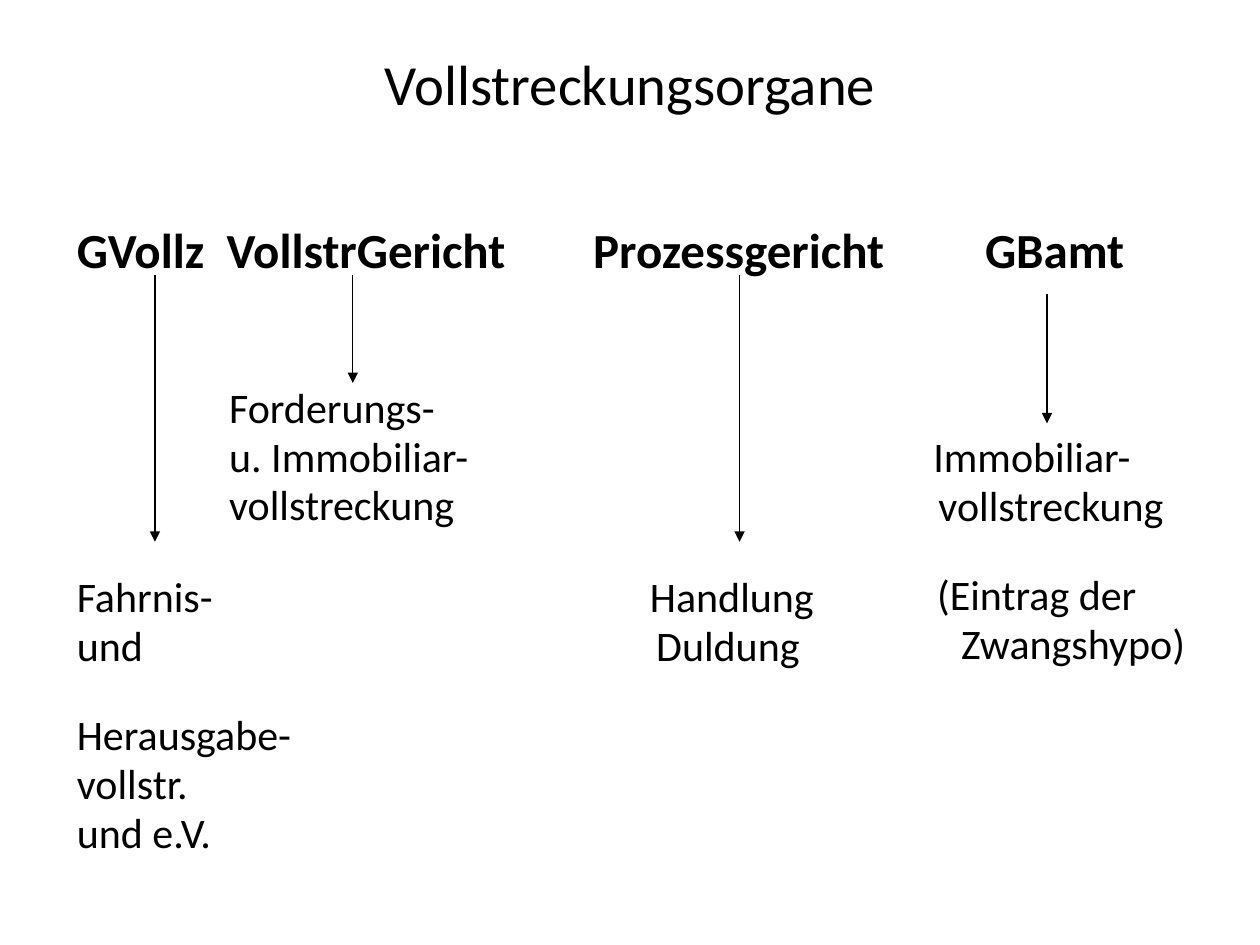
from lxml.etree import SubElement
from pptx import Presentation
from pptx.dml.color import RGBColor
from pptx.enum.shapes import MSO_CONNECTOR
from pptx.enum.text import MSO_ANCHOR, MSO_AUTO_SIZE, PP_ALIGN
from pptx.oxml.ns import qn
from pptx.util import Inches, Pt

BLACK = RGBColor(0, 0, 0)
FONT = "Calibri"
TITLE = "Vollstreckungsorgane"
LINE_GAP, GROUP_GAP = 4.8, 28
COLUMN_TOP = 1.78
COLUMNS = [
    {"box": (0.51, 1.95, 4.95), "heading": ("GVollz", 0), "tasks": [
        ("Fahrnis-", 0, 173), ("und", 0, LINE_GAP),
        ("Herausgabe-", 0, GROUP_GAP), ("vollstr.", 0, LINE_GAP),
        ("und e.V.", 0, LINE_GAP)]},
    {"box": (1.7, 2.6, 2.5), "heading": ("VollstrGericht", 0), "tasks": [
        ("Forderungs-", 0.02, 65), ("u. Immobiliar-", 0.02, LINE_GAP),
        ("vollstreckung", 0.02, LINE_GAP)]},
    {"box": (4.61, 2.65, 3.6), "heading": ("Prozessgericht", 0), "tasks": [
        ("Handlung", 0.45, 173), ("Duldung", 0.5, LINE_GAP)]},
    {"box": (7.31, 2.3, 3.6), "heading": ("GBamt", 0.41), "tasks": [
        ("Immobiliar-", 0, 93), ("vollstreckung", 0.04, LINE_GAP),
        ("(Eintrag der", 0.03, GROUP_GAP), ("Zwangshypo)", 0.22, LINE_GAP)]},
]
ARROWS = [(1.23, 2.18, 4.3), (2.8, 2.18, 3.04),
          (8.31, 2.33, 3.36), (5.87, 2.18, 4.3)]


def place(sp, left, top, width, height):
    sp.left, sp.top = Inches(left), Inches(top)
    sp.width, sp.height = Inches(width), Inches(height)
    sp.text_frame.auto_size = MSO_AUTO_SIZE.NONE
    sp.text_frame.word_wrap = True


def style(p, size, bold=False):
    for r in p.runs:
        r.font.name = FONT
        r.font.size = Pt(size)
        r.font.bold = bold
        r.font.color.rgb = BLACK


def set_line(p, text, indent, gap, size, bold=False):
    p.text = text
    p.line_spacing = 0.8
    p.space_before = Pt(gap)
    pPr = p._p.get_or_add_pPr()
    pPr.set("marL", str(int(Inches(indent))))
    pPr.set("indent", "0")
    SubElement(pPr, qn("a:buNone"))
    style(p, size, bold)


def fill_column(sp, column):
    left, width, height = column["box"]
    place(sp, left, COLUMN_TOP, width, height)
    tf = sp.text_frame
    set_line(tf.paragraphs[0], *column["heading"], 0, 28, bold=True)
    for text, indent, gap in column["tasks"]:
        set_line(tf.add_paragraph(), text, indent, gap, 24)


def add_arrow(s, x, top, bottom):
    line = s.shapes.add_connector(
        MSO_CONNECTOR.STRAIGHT, Inches(x), Inches(top), Inches(x), Inches(bottom))
    line.line.color.rgb = BLACK
    line.line.width = Pt(0.75)
    SubElement(line.line._get_or_add_ln(), qn("a:tailEnd"), type="triangle")
    SubElement(line._element.spPr, qn("a:effectLst"))


def main():
    """Build the slide on the enforcement bodies and their tasks."""
    prs = Presentation()
    prs.slide_width, prs.slide_height = Inches(10), Inches(7.5)
    s = prs.slides.add_slide(prs.slide_layouts[1])

    title = s.shapes.title
    place(title, 0.5, 0.3, 9, 1.25)
    tf = title.text_frame
    tf.text = TITLE
    tf.vertical_anchor = MSO_ANCHOR.MIDDLE
    tf.margin_bottom = Inches(0.58)
    tf.paragraphs[0].alignment = PP_ALIGN.CENTER
    style(tf.paragraphs[0], 32.4)

    fill_column(s.placeholders[1], COLUMNS[0])
    for column in COLUMNS[1:]:
        fill_column(s.shapes.add_textbox(0, 0, 0, 0), column)

    for arrow in ARROWS:
        add_arrow(s, *arrow)
    prs.save("out.pptx")


if __name__ == "__main__":
    main()
